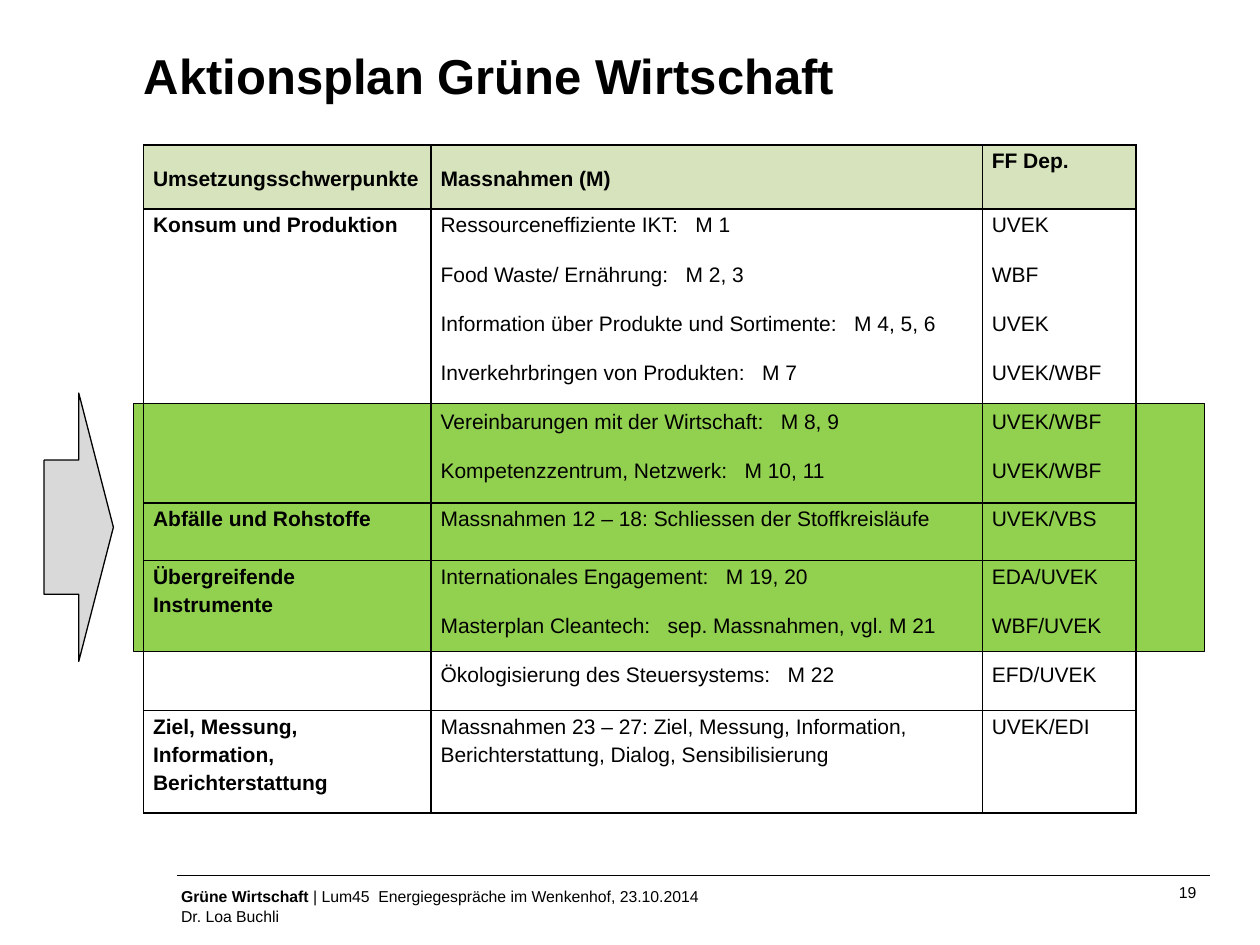
import pptx
import pptx.util
import pptx.dml.color
import pptx.enum.shapes
import pptx.enum.text
import lxml.etree

Pt = pptx.util.Pt
SHAPE = pptx.enum.shapes.MSO_SHAPE
ANCHOR = pptx.enum.text.MSO_ANCHOR
ALIGN = pptx.enum.text.PP_ALIGN
NS = "http://schemas.openxmlformats.org/drawingml/2006/main"
COLORS = {"text": "000000", "line": "000000", "header": "D6E3BC",
          "highlight": "92D050", "arrow": "D9D9D9"}


def rgb(name):
    return pptx.dml.color.RGBColor.from_string(COLORS[name])


def add_text(p, text, size=12, bold=False, spacing=None, before=0, after=0, align=ALIGN.LEFT):
    p.alignment = align
    p.space_before, p.space_after = Pt(before), Pt(after)
    if spacing:
        p.line_spacing = spacing
    for i, line in enumerate(text.split("\n")):
        if i:
            p.add_line_break()
        r = p.add_run()
        r.text = line
        r.font.name, r.font.size, r.font.bold = "Arial", Pt(size), bold
        r.font.color.rgb = rgb("text")


prs = pptx.Presentation()
prs.slide_width, prs.slide_height = Pt(720), Pt(540)
s = prs.slides.add_slide(prs.slide_layouts[6])

shapes = [
    (SHAPE.OCTAGON, 96.5, 499, 473, 48, None),
    (SHAPE.RECTANGLE, 76.3, 230.4, 612, 141.8, "highlight"),
    (SHAPE.RIGHT_ARROW, 25.2, 224.6, 39.6, 153.4, "arrow"),
]
drawn = []
for kind, x, y, w, h, color in shapes:
    sp = s.shapes.add_shape(kind, Pt(x), Pt(y), Pt(w), Pt(h))
    sp.shadow.inherit = False
    if color:
        sp.fill.solid()
        sp.fill.fore_color.rgb = rgb(color)
        sp.line.color.rgb = rgb("line")
        sp.line.width = Pt(0.75)
    else:
        sp.fill.background()
        sp.line.fill.background()
    drawn.append(sp)
footer = drawn[0]

title = s.shapes.add_textbox(Pt(82.3), Pt(26), Pt(587.5), Pt(78))
number = s.shapes.add_textbox(Pt(507.6), Pt(504), Pt(176), Pt(11.5))
for sp in (footer, title, number):
    tf = sp.text_frame
    tf.word_wrap = True
    tf.vertical_anchor = ANCHOR.TOP
    tf.margin_left = tf.margin_top = tf.margin_right = tf.margin_bottom = 0

p = footer.text_frame.paragraphs[0]
add_text(p, "Grüne Wirtschaft ", size=9, bold=True, spacing=1.05)
add_text(p, "| Lum45  Energiegespräche im Wenkenhof, 23.10.2014\nDr. Loa Buchli",
         size=9, spacing=1.05)
add_text(title.text_frame.paragraphs[0], "Aktionsplan Grüne Wirtschaft", size=28, bold=True)
add_text(number.text_frame.paragraphs[0], "19", size=9, spacing=1.05, align=ALIGN.RIGHT)

rule = s.shapes.add_connector(pptx.enum.shapes.MSO_CONNECTOR.STRAIGHT,
                              Pt(691.2), Pt(500.4), Pt(101.2), Pt(500.4))
rule.line.color.rgb = rgb("line")
rule.line.width = Pt(0.75)
lxml.etree.SubElement(rule._element.spPr, f"{{{NS}}}effectLst")

rows = [
    (["Umsetzungsschwerpunkte"], ["Massnahmen (M)"], ["FF Dep."]),
    (["Konsum und Produktion"],
     ["Ressourceneffiziente IKT:   M 1", "Food Waste/ Ernährung:   M 2, 3",
      "Information über Produkte und Sortimente:   M 4, 5, 6",
      "Inverkehrbringen von Produkten:   M 7",
      "Vereinbarungen mit der Wirtschaft:   M 8, 9",
      "Kompetenzzentrum, Netzwerk:   M 10, 11"],
     ["UVEK", "WBF", "UVEK", "UVEK/WBF", "UVEK/WBF", "UVEK/WBF"]),
    (["Abfälle und Rohstoffe"],
     ["Massnahmen 12 – 18: Schliessen der Stoffkreisläufe"], ["UVEK/VBS"]),
    (["Übergreifende \nInstrumente"],
     ["Internationales Engagement:   M 19, 20",
      "Masterplan Cleantech:   sep. Massnahmen, vgl. M 21",
      "Ökologisierung des Steuersystems:   M 22"],
     ["EDA/UVEK", "WBF/UVEK", "EFD/UVEK"]),
    (["Ziel, Messung, Information, Berichterstattung"],
     ["Massnahmen 23 – 27: Ziel, Messung, Information, "
      "Berichterstattung, Dialog, Sensibilisierung"], ["UVEK/EDI"]),
]
widths = [164.3, 315, 87.9]
heights = [36.7, 168, 32.9, 85.7, 58.5]
table = s.shapes.add_table(len(rows), len(widths), Pt(82.1), Pt(82.8),
                           Pt(sum(widths)), Pt(sum(heights))).table
table.first_row = table.horz_banding = False
for column, width in zip(table.columns, widths):
    column.width = Pt(width)
for i, (row, height) in enumerate(zip(rows, heights)):
    table.rows[i].height = Pt(height)
    for j, lines in enumerate(row):
        cell = table.cell(i, j)
        cell.margin_left = cell.margin_right = Pt(5.4)
        cell.margin_top = cell.margin_bottom = 0
        cell.vertical_anchor = ANCHOR.MIDDLE if i == 0 and j < 2 else ANCHOR.TOP
        tcPr = cell._tc.get_or_add_tcPr()
        for side in ("lnL", "lnR", "lnT", "lnB"):
            ln = lxml.etree.SubElement(tcPr, f"{{{NS}}}{side}", w=str(Pt(1)))
            fill = lxml.etree.SubElement(ln, f"{{{NS}}}solidFill")
            lxml.etree.SubElement(fill, f"{{{NS}}}srgbClr", val=COLORS["line"])
        if i == 0:
            cell.fill.solid()
            cell.fill.fore_color.rgb = rgb("header")
        else:
            cell.fill.background()
        tf = cell.text_frame
        for k, line in enumerate(lines):
            p = tf.add_paragraph() if k else tf.paragraphs[0]
            add_text(p, line, bold=i == 0 or j == 0, spacing=1.2,
                     before=6 if k else 0, after=6)

prs.save("out.pptx")
